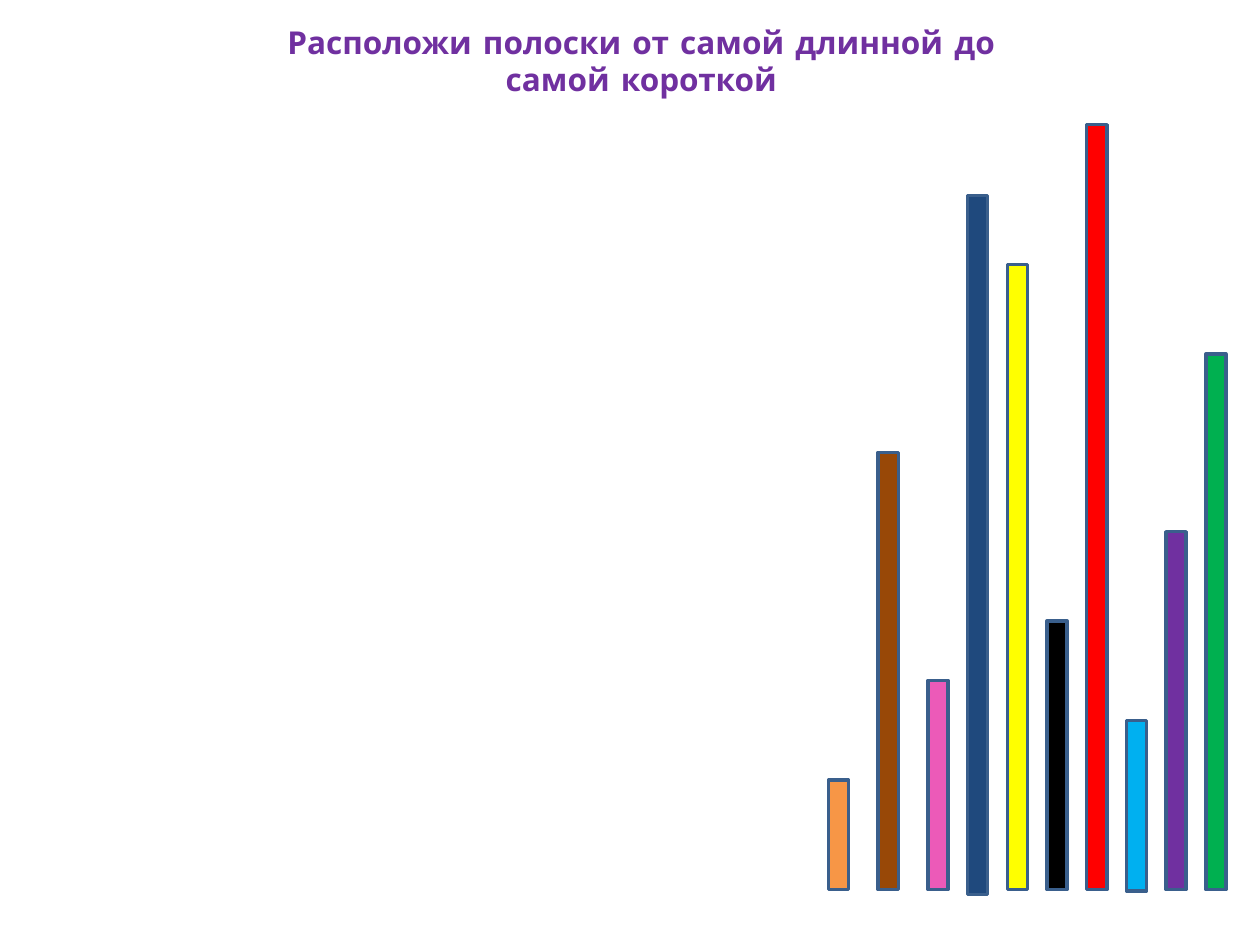
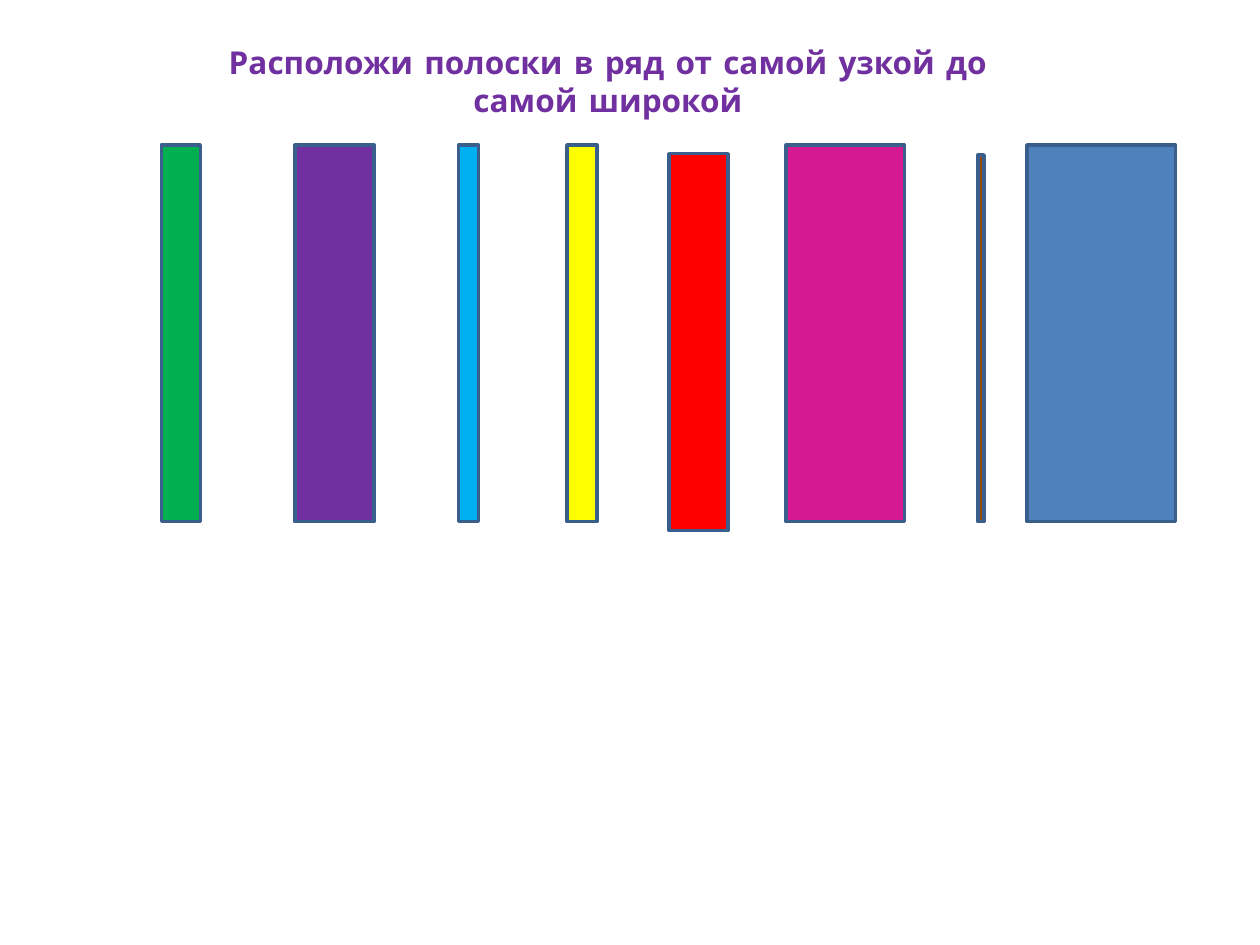
import pptx
import pptx.util
import pptx.dml.color
import pptx.enum.shapes
import pptx.enum.text

Inches, Pt = pptx.util.Inches, pptx.util.Pt

FONT = "Comic Neue"
PURPLE, OUTLINE = "7030A0", "3A5F8C"
GREEN, CYAN, RED, YELLOW, BROWN = "00B050", "00B0F0", "FF0000", "FFFF00", "984807"

# Titles: text, (left, top, width, height)
LENGTH_TITLE = ("Расположи полоски от самой длинной до самой короткой",
                (1.82, 0.13, 6.54, 0.71))
WIDTH_TITLE = ("Расположи полоски в ряд от самой узкой до самой широкой",
               (1.38, 0.29, 6.89, 0.71))

# Strips of different length, right to left: colour, top, bottom
LENGTH_STRIPS = [
    (GREEN, 2.81, 7.06), (PURPLE, 4.22, 7.06), (CYAN, 5.72, 7.07),
    (RED, 0.99, 7.06), ("000000", 4.93, 7.06), (YELLOW, 2.10, 7.06),
    ("1F497D", 1.55, 7.10), ("EC5AB8", 5.40, 7.06),
    (BROWN, 3.59, 7.06), ("F79646", 6.19, 7.06),
]
STRIP_WIDTH = 0.16
LAST_LEFT = 9.57
CLOSE_STEP, WIDE_STEP = 0.315, 0.395
CLOSE_STEPS = 7  # the remaining strips stand further apart

# Strips of different width, right to left: colour, left, top, width, height
WIDTH_STRIPS = [
    ("4F81BD", 8.15, 1.15, 1.18, 2.99), (BROWN, 7.76, 1.23, 0.05, 2.91),
    ("D51992", 6.24, 1.15, 0.94, 2.99), (RED, 5.31, 1.22, 0.47, 2.99),
    (YELLOW, 4.50, 1.15, 0.24, 2.99), (CYAN, 3.64, 1.15, 0.16, 2.99),
    (PURPLE, 2.34, 1.15, 0.63, 2.99), (GREEN, 1.28, 1.15, 0.31, 2.99),
]


def rgb(value):
    return pptx.dml.color.RGBColor.from_string(value)


def add_slide(prs, text, box):
    s = prs.slides.add_slide(prs.slide_layouts[5])
    title = s.shapes.title
    title.left, title.top, title.width, title.height = map(Inches, box)
    tf = title.text_frame
    tf.text = text
    tf.word_wrap = True
    tf.auto_size = pptx.enum.text.MSO_AUTO_SIZE.SHAPE_TO_FIT_TEXT
    tf.vertical_anchor = pptx.enum.text.MSO_ANCHOR.TOP
    p = tf.paragraphs[0]
    p.alignment = pptx.enum.text.PP_ALIGN.CENTER
    p.font.name, p.font.size, p.font.bold = FONT, Pt(18), True
    p.font.color.rgb = rgb(PURPLE)
    return s


def add_strip(s, colour, left, top, width, height):
    sp = s.shapes.add_shape(pptx.enum.shapes.MSO_SHAPE.RECTANGLE,
                            *map(Inches, (left, top, width, height)))
    sp.shadow.inherit = False
    sp.fill.solid()
    sp.fill.fore_color.rgb = rgb(colour)
    sp.line.color.rgb = rgb(OUTLINE)
    sp.line.width = Pt(2)


def main():
    prs = pptx.Presentation()
    prs.slide_width, prs.slide_height = Inches(10), Inches(7.5)

    # Longest to shortest
    s = add_slide(prs, *LENGTH_TITLE)
    for i, (colour, top, bottom) in enumerate(LENGTH_STRIPS):
        close = min(i, CLOSE_STEPS)
        left = LAST_LEFT - close * CLOSE_STEP - (i - close) * WIDE_STEP
        add_strip(s, colour, left, top, STRIP_WIDTH, bottom - top)

    # Narrowest to widest
    s = add_slide(prs, *WIDTH_TITLE)
    for strip in WIDTH_STRIPS:
        add_strip(s, *strip)

    prs.save("out.pptx")


if __name__ == "__main__":
    main()
